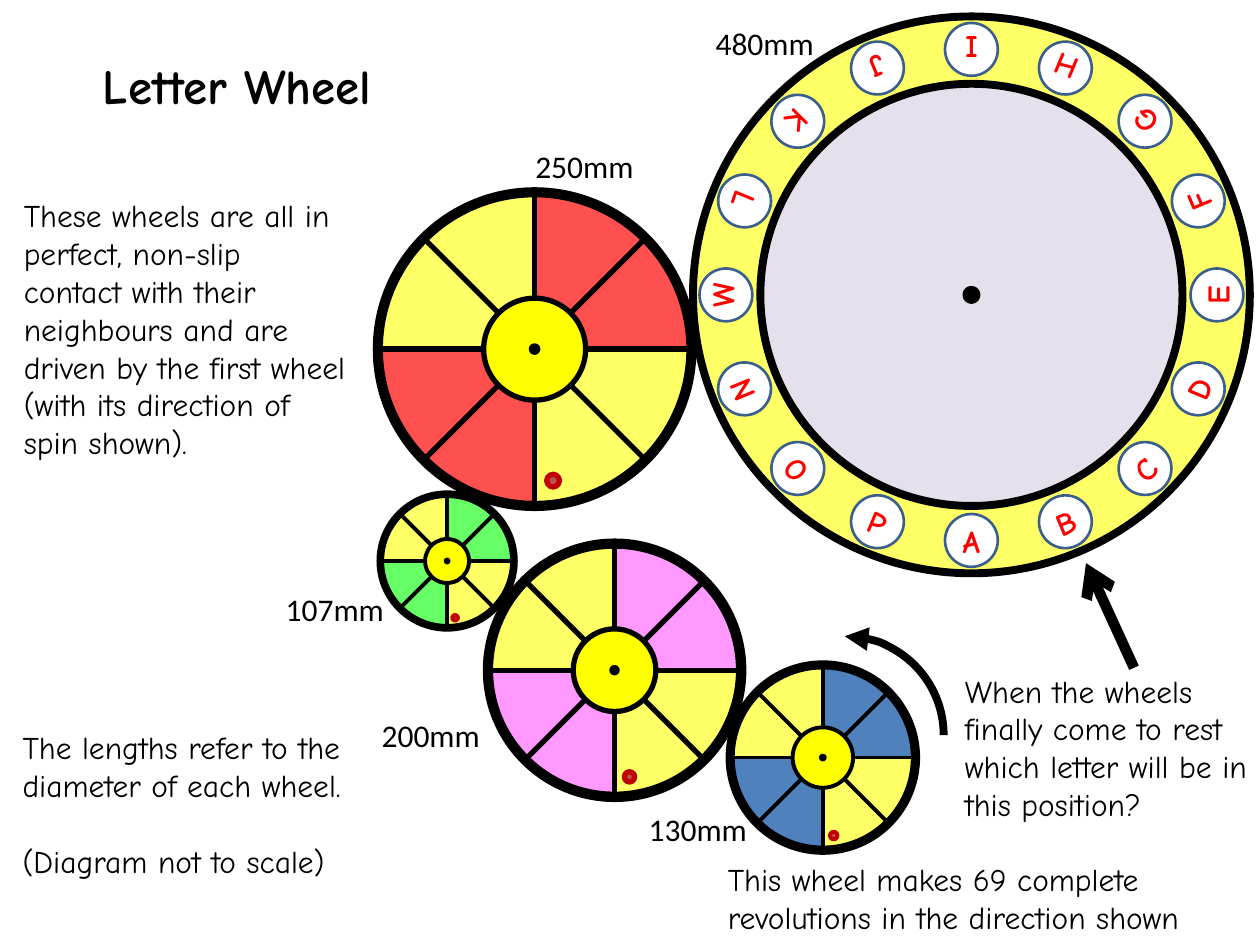
from math import cos, radians, sin, sqrt

from lxml import etree
from pptx import Presentation
from pptx.dml.color import RGBColor
from pptx.enum.shapes import MSO_CONNECTOR, MSO_SHAPE
from pptx.enum.text import MSO_ANCHOR, PP_ALIGN
from pptx.oxml.ns import qn
from pptx.util import Pt

ELLIPSE, PIE, ARC = MSO_SHAPE.OVAL, MSO_SHAPE.PIE, MSO_SHAPE.ARC
STRAIGHT = MSO_CONNECTOR.STRAIGHT
LEFT, CENTER = PP_ALIGN.LEFT, PP_ALIGN.CENTER
TOP, MIDDLE = MSO_ANCHOR.TOP, MSO_ANCHOR.MIDDLE
COLORS = {
    "black": "000000", "white": "FFFFFF", "yellow": "FFFF66", "hub": "FFFF00",
    "lilac": "E6E0EC", "outline": "3A5F8C", "letter": "FF0000", "blue": "4F81BD",
    "pink": "FF99FF", "green": "66FF66", "red": "FF5050", "marker": "C0504D",
    "marker_line": "C00000",
}
HAND, PLAIN = "Comic Neue", "Calibri"
QUARTER_TURN = 54


def rgb(name):
    """Return the named colour."""
    return RGBColor.from_string(COLORS[name])


def write(shape, *paragraphs, font=HAND, size=18, color="black", bold=False,
          align=LEFT, anchor=TOP, wrap=True, gap=0):
    """Fill a shape with formatted paragraphs, separated by a gap in points."""
    frame = shape.text_frame
    frame.word_wrap = wrap
    frame.vertical_anchor = anchor
    for index, text in enumerate(paragraphs):
        paragraph = frame.add_paragraph() if index else frame.paragraphs[0]
        paragraph.alignment = align
        paragraph.space_before = Pt(gap if index else 0)
        run = paragraph.add_run()
        run.text = text
        run.font.name, run.font.size, run.font.bold = font, Pt(size), bold
        run.font.color.rgb = rgb(color)


def add_text(slide, box, *paragraphs, **style):
    """Add a text box at (left, top, width, height)."""
    write(slide.shapes.add_textbox(*map(Pt, box)), *paragraphs, **style)


def add_round(slide, center, diameter, kind=ELLIPSE, fill=None, line=None, width=3):
    """Add a round shape about a centre point."""
    left, top = (value - diameter / 2 for value in center)
    shape = slide.shapes.add_shape(kind, Pt(left), Pt(top), Pt(diameter), Pt(diameter))
    shape.shadow.inherit = False
    if fill:
        shape.fill.solid()
        shape.fill.fore_color.rgb = rgb(fill)
    else:
        shape.fill.background()
    if line:
        shape.line.color.rgb = rgb(line)
        shape.line.width = Pt(width)
    else:
        shape.line.fill.background()
    return shape


def add_line(slide, start, end, width):
    """Add a straight black line without a shadow."""
    line = slide.shapes.add_connector(STRAIGHT, *map(Pt, (*start, *end)))
    line.line.color.rgb = rgb("black")
    line.line.width = Pt(width)
    etree.SubElement(line._element.spPr, qn("a:effectLst"))
    return line


def add_arrowhead(shape, end, kind):
    """Put an arrowhead on the headEnd or tailEnd of a line."""
    etree.SubElement(shape.line._get_or_add_ln(), qn(f"a:{end}"), type=kind)


def add_letter_wheel(slide, center, diameter):
    """Draw the ring with the letters A to P, anticlockwise from the bottom."""
    add_round(slide, center, diameter, fill="yellow", line="black", width=4.5)
    add_round(slide, center, 0.758 * diameter, fill="lilac", line="black", width=4.5)
    add_round(slide, center, 5.8, fill="black", line="black", width=4.5)
    letters = "ABCDEFGHIJKLMNOP"
    radius = 0.441 * diameter
    step = 360 / len(letters)
    for index, letter in enumerate(letters):
        angle = radians(index * step)
        place = center[0] + radius * sin(angle), center[1] + radius * cos(angle)
        disc = add_round(slide, place, 30.2, fill="white", line="outline", width=1.5)
        disc.rotation = -index * step % 360
        frame = disc.text_frame
        frame.margin_left = frame.margin_right = 0
        frame.margin_top = frame.margin_bottom = 0
        write(disc, letter, color="letter", bold=True, align=CENTER,
              anchor=MIDDLE, wrap=False)


def add_wheel(slide, center, diameter, color, width, rims):
    """Draw a spoked wheel with two coloured quarters, a hub and a marker dot."""
    x, y = center
    for rotation in (0, 180):
        for quarter, fill in enumerate(("yellow", color)):
            pie = add_round(slide, center, 0.96 * diameter, PIE, fill=fill)
            pie.adjustments[0] = quarter * QUARTER_TURN
            pie.adjustments[1] = (quarter + 1) * QUARTER_TURN
            pie.rotation = rotation
    radius = diameter / 2
    slant = radius / sqrt(2)
    for dx, dy in ((0, radius), (radius, 0), (slant, slant), (-slant, slant)):
        add_line(slide, (x - dx, y - dy), (x + dx, y + dy), width)
    add_round(slide, center, 0.32 * diameter, fill="hub", line="black", width=width)
    add_round(slide, center, 0.02 * diameter, fill="black", line="black", width=width)
    for rim, rim_width in rims:
        add_round(slide, center, rim, line="black", width=rim_width)
    marker = x + 0.058 * diameter, y + 0.413 * diameter
    add_round(slide, marker, 0.04 * diameter, fill="marker",
              line="marker_line", width=width)


def add_arrows(slide):
    """Draw the spin arrow and the arrow to the resting position."""
    spin = add_round(slide, (482.8, 420.1), 113, ARC, line="black", width=4.5)
    add_arrowhead(spin, "headEnd", "triangle")
    pointer = add_line(slide, (648, 381.6), (620.6, 321.8), 6)
    add_arrowhead(pointer, "tailEnd", "arrow")


def add_texts(slide):
    """Write the title, the notes on the puzzle and the wheel sizes."""
    add_text(slide, (51.8, 28.1, 199.4, 41), "Letter Wheel", size=28, bold=True, wrap=False)
    add_text(slide, (408.8, 488, 299.5, 51),
             "This wheel makes 69 complete revolutions in the direction shown")
    add_text(slide, (544.3, 380.2, 192.2, 94.3),
             "When the wheels finally come to rest which letter will be in this position?")
    add_text(slide, (6.5, 108.7, 198, 181.4),
             "These wheels are all in perfect, non-slip contact with their neighbours "
             "and are driven by the first wheel (with its direction of spin shown).")
    add_text(slide, (5.8, 412.6, 216, 116.6),
             "The lengths refer to the diameter of each wheel.",
             "(Diagram not to scale)", gap=21.6)
    sizes = (("130mm", 363.6, 459.4), ("200mm", 211, 405.4), ("107mm", 156.2, 333.4),
             ("250mm", 298.8, 80.6), ("480mm", 401.8, 10.1))
    for text, left, top in sizes:
        add_text(slide, (left, top, 71.3, 28.8), text, font=PLAIN, wrap=False)


def main():
    """Build the slide and save it."""
    presentation = Presentation()
    presentation.slide_width, presentation.slide_height = Pt(720), Pt(540)
    slide = presentation.slides.add_slide(presentation.slide_layouts[6])
    add_letter_wheel(slide, (555.1, 168.5), 318.2)
    wheels = (
        ((470.2, 432.9), 108, "blue", 2.25, ((108, 2.25), (106.6, 4.5), (103.7, 3))),
        ((351.2, 383), 147.6, "pink", 3, ((147.6, 3), (143.3, 3), (141.8, 3))),
        ((255.5, 320.6), 78.5, "green", 2.25, ((78.5, 2.25), (76.3, 2.25), (74.2, 2.25))),
        ((305.5, 199.5), 182, "red", 3, ((182, 3), (176.4, 3))),
    )
    for wheel in wheels:
        add_wheel(slide, *wheel)
    add_arrows(slide)
    add_texts(slide)
    presentation.save("out.pptx")


if __name__ == "__main__":
    main()
